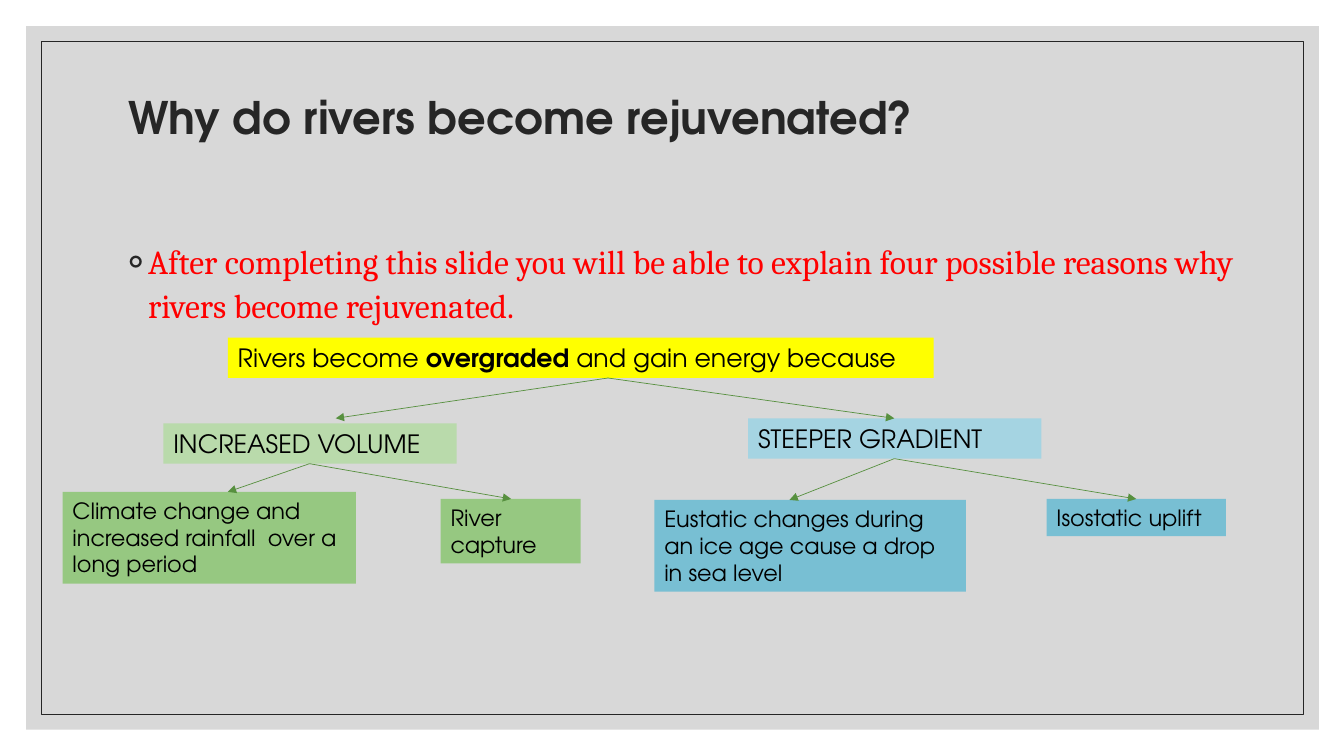
import pptx
import pptx.dml.color
import pptx.enum.shapes
import pptx.enum.text
import pptx.oxml
import pptx.oxml.ns
import pptx.util
from lxml import etree

PX = 9144  # EMU, 100 px to the inch
HEADING_FONT = "TeX Gyre Adventor"
INK = "262626"

# Each box: text, (left, top, width, height), fill, tip of the arrow leading to it
BRANCHES = [
    (("INCREASED VOLUME", (162, 420, 291, 40), "B9DAAB", (333, 415)), [
        ("Climate change and increased rainfall  over a long period",
         (62, 488, 291, 91), "96C881", (226, 488)),
        ("River capture", (437, 495, 139, 64), "96C881", (507, 495)),
    ]),
    (("STEEPER GRADIENT", (742, 415, 291, 40), "A5D4E2", (887, 415)), [
        ("Eustatic changes during an ice age cause a drop in sea level",
         (649, 496, 309, 91), "78BFD3", (783, 496)),
        ("Isostatic uplift", (1038, 495, 178, 37), "78BFD3", (1127, 495)),
    ]),
]


def emu(lengths):
    return [pptx.util.Emu(length * PX) for length in lengths]


def color(value):
    return pptx.dml.color.RGBColor.from_string(value)


def set_font(font, name, size, ink):
    font.name = name
    font.size = pptx.util.Pt(size)
    font.color.rgb = color(ink)


def add_rect(slide, box, fill=None, line=None):
    rect = slide.shapes.add_shape(pptx.enum.shapes.MSO_SHAPE.RECTANGLE, *emu(box))
    rect.shadow.inherit = False
    if fill:
        rect.fill.solid()
        rect.fill.fore_color.rgb = color(fill)
    else:
        rect.fill.background()
    if line:
        rect.line.color.rgb = color(line)
        rect.line.width = pptx.util.Pt(0.5)
    else:
        rect.line.fill.background()
    return rect


def add_frame(slide, box):
    """Grey translucent panel with a thin outline inset from its edge."""
    left, top, width, height = box
    inset = 15
    panel = add_rect(slide, box, fill="BFBFBF")
    tint = panel._element.spPr.find(".//" + pptx.oxml.ns.qn("a:srgbClr"))
    etree.SubElement(tint, pptx.oxml.ns.qn("a:alpha"), val="60000")
    add_rect(slide, (left + inset, top + inset, width - 2 * inset, height - 2 * inset),
             line=INK)


def place_title(slide, box):
    title = slide.shapes.title
    slide.shapes.element.append(title.element)  # in front of the frame
    title.left, title.top, title.width, title.height = emu(box)
    frame = title.text_frame
    frame.text = "Why do rivers become rejuvenated?"
    frame.auto_size = pptx.enum.text.MSO_AUTO_SIZE.NONE
    frame.vertical_anchor = pptx.enum.text.MSO_ANCHOR.MIDDLE
    paragraph = frame.paragraphs[0]
    paragraph.alignment = pptx.enum.text.PP_ALIGN.LEFT
    paragraph.line_spacing = 0.9
    set_font(paragraph.font, HEADING_FONT, 32, INK)
    paragraph.font.bold = True


def add_objective(slide, box):
    frame = slide.shapes.add_textbox(*emu(box)).text_frame
    frame.word_wrap = True
    paragraph = frame.paragraphs[0]
    paragraph.text = ("After completing this slide you will be able to explain "
                      "four possible reasons why rivers become rejuvenated.")
    paragraph.line_spacing = 1.1
    paragraph.space_before = pptx.util.Pt(9)
    set_font(paragraph.font, "Cambria", 24, "FF0000")
    properties = paragraph._p.get_or_add_pPr()
    indent = 20 * PX
    properties.set("marL", str(indent))
    properties.set("indent", str(-indent))
    namespace = pptx.oxml.ns.nsdecls("a")
    bullet = [f'<a:buClr {namespace}><a:srgbClr val="{INK}"/></a:buClr>',
              f'<a:buFont {namespace} typeface="{HEADING_FONT}"/>',
              f'<a:buChar {namespace} char="◦"/>']
    end = properties.find(pptx.oxml.ns.qn("a:defRPr"))
    for part in map(pptx.oxml.parse_xml, bullet):
        if end is None:
            properties.append(part)
        else:
            end.addprevious(part)


def add_label(slide, box, fill, size, *texts):
    """Filled box whose every second run is bold."""
    frame = add_rect(slide, box, fill).text_frame
    frame.word_wrap = True
    frame.vertical_anchor = pptx.enum.text.MSO_ANCHOR.TOP
    paragraph = frame.paragraphs[0]
    paragraph.alignment = pptx.enum.text.PP_ALIGN.LEFT
    set_font(paragraph.font, HEADING_FONT, size, "000000")
    for index, text in enumerate(texts):
        run = paragraph.add_run()
        run.text = text
        set_font(run.font, HEADING_FONT, size, "000000")
        run.font.bold = index % 2 == 1


def add_arrow(slide, start, tip):
    arrow = slide.shapes.add_connector(
        pptx.enum.shapes.MSO_CONNECTOR.STRAIGHT, *emu(start + tip))
    arrow.line.color.rgb = color("57903F")
    arrow.line.width = pptx.util.Pt(0.5)
    etree.SubElement(arrow.line._get_or_add_ln(), pptx.oxml.ns.qn("a:tailEnd"),
                     type="triangle")
    etree.SubElement(arrow._element.spPr, pptx.oxml.ns.qn("a:effectLst"))


def bottom_center(box):
    left, top, width, height = box
    return left + width // 2, top + height


def add_cause_tree(slide, box):
    add_label(slide, box, "FFFF00", 18,
              "Rivers become ", "overgraded ", "and gain energy because")
    root_start = (603, box[1] + box[3])
    for (cause, cause_box, cause_fill, cause_tip), reasons in BRANCHES:
        add_label(slide, cause_box, cause_fill, 18, cause)
        add_arrow(slide, root_start, cause_tip)
        for reason, reason_box, reason_fill, reason_tip in reasons:
            add_label(slide, reason_box, reason_fill, 16, reason)
            add_arrow(slide, bottom_center(cause_box), reason_tip)


def main():
    presentation = pptx.Presentation()
    presentation.slide_width, presentation.slide_height = emu((1333, 750))
    slide = presentation.slides.add_slide(presentation.slide_layouts[5])
    add_frame(slide, (26, 26, 1282, 698))
    place_title(slide, (117, 70, 1100, 99))
    add_objective(slide, (117, 230, 1154, 421))
    add_cause_tree(slide, (226, 335, 700, 40))
    presentation.save("out.pptx")


if __name__ == "__main__":
    main()
